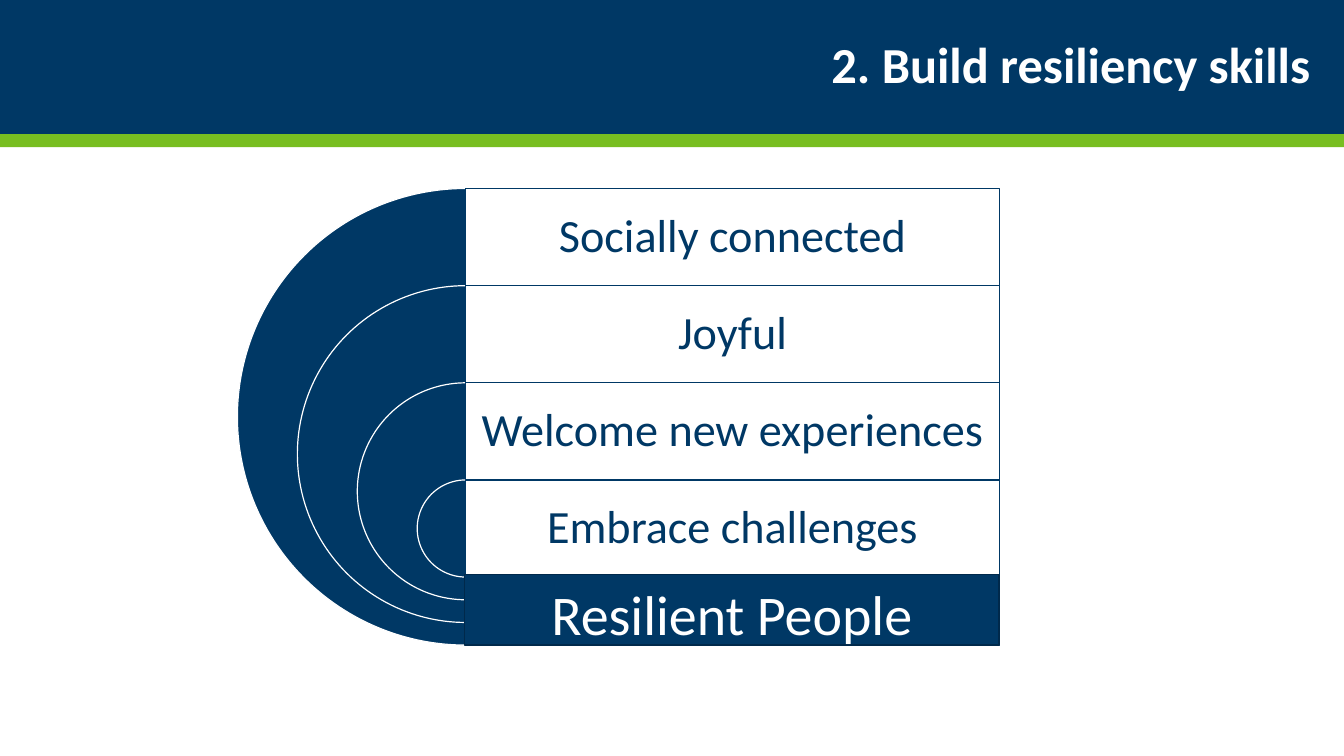
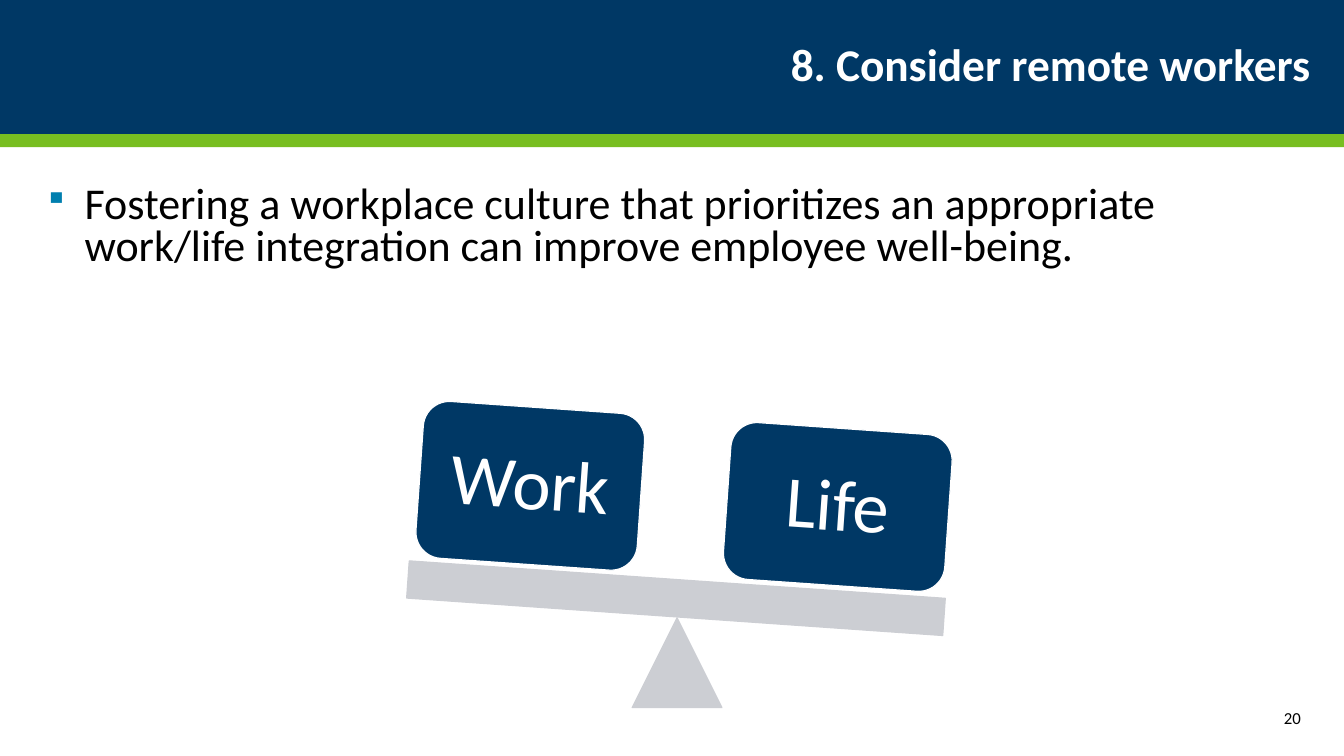
"""Build two slides on resilience and remote work."""
from dataclasses import dataclass

from lxml.etree import SubElement
from pptx import Presentation
from pptx.dml.color import RGBColor as Color
from pptx.enum.shapes import MSO_SHAPE as Kind
from pptx.enum.text import MSO_ANCHOR as Anchor, PP_ALIGN as Align
from pptx.oxml.ns import qn
from pptx.shapes.autoshape import Shape
from pptx.slide import Slide
from pptx.util import Inches, Pt

NAVY = Color(0x00, 0x38, 0x65)
DARK = Color(0x00, 0x29, 0x4B)
GREEN = Color(0x78, 0xBE, 0x21)
BLUE = Color(0x00, 0x7F, 0xAF)
GRAY = Color(0xCC, 0xCE, 0xD3)
WHITE = Color(0xFF, 0xFF, 0xFF)
BLACK = Color(0x00, 0x00, 0x00)
FONT = "Calibri"
WIDTH, HEIGHT = 13.33, 7.5
HEAD = 1.33
TILT = 4


@dataclass(frozen=True)
class Box:
    """Hold a place and size in inches."""
    left: float
    top: float
    width: float
    height: float

    def lengths(self) -> tuple:
        """Return the four lengths for a new shape."""
        return tuple(Inches(v) for v in (self.left, self.top, self.width, self.height))


@dataclass(frozen=True)
class Weight:
    """Hold a word and its block on the scale."""
    word: str
    box: Box


WEIGHTS = (
    Weight("Life", Box(7.21, 4.25, 2.2, 1.56)),
    Weight("Work", Box(4.16, 4.04, 2.2, 1.56)),
)
SKILLS = ("Socially connected", "Joyful", "Welcome new experiences", "Embrace challenges")


def draw(slide: Slide, kind: Kind, box: Box, fill: Color, line: Color | None = None,
         alpha: int = 100, turn: float = 0) -> Shape:
    """Draw a flat preset shape with its opacity in percent."""
    shape = slide.shapes.add_shape(kind, *box.lengths())
    shape.shadow.inherit = False
    shape.rotation = turn
    shape.fill.solid()
    shape.fill.fore_color.rgb = fill
    if alpha < 100:
        tone = shape.fill._xPr.find(qn("a:solidFill"))[0]
        SubElement(tone, qn("a:alpha")).set("val", str(alpha * 1000))
    if line is None:
        shape.line.fill.background()
    else:
        shape.line.color.rgb = line
        shape.line.width = Pt(0.85)
    return shape


def write(shape: Shape, text: str, size: float, color: Color, bold: bool = False,
          align: Align = Align.CENTER, anchor: Anchor = Anchor.MIDDLE,
          lead: float = 0.9, side: float = 0.1, edge: float = 0.05) -> None:
    """Fill a shape with one formatted paragraph."""
    frame = shape.text_frame
    frame.word_wrap = True
    frame.vertical_anchor = anchor
    frame.margin_left = frame.margin_right = Inches(side)
    frame.margin_top = frame.margin_bottom = Inches(edge)
    para = frame.paragraphs[0]
    para.alignment = align
    para.line_spacing = lead
    run = para.add_run()
    run.text = text
    font = run.font
    font.name, font.size, font.bold = FONT, Pt(size), bold
    font.color.rgb = color


def label(slide: Slide, box: Box, text: str, size: float, color: Color, **style) -> Shape:
    """Add a text box."""
    shape = slide.shapes.add_textbox(*box.lengths())
    write(shape, text, size, color, **style)
    return shape


def bullet(shape: Shape, sign: str, color: Color, indent: float, space: float,
           scale: int) -> None:
    """Give the first paragraph a hanging bullet scaled in percent."""
    para = shape.text_frame.paragraphs[0]
    para.space_before = para.space_after = Pt(space)
    props = para._p.get_or_add_pPr()
    props.set("marL", str(Inches(indent)))
    props.set("indent", str(-Inches(indent)))
    tone = SubElement(props, qn("a:buClr"))
    SubElement(tone, qn("a:srgbClr")).set("val", str(color))
    SubElement(props, qn("a:buSzPct")).set("val", str(scale * 1000))
    SubElement(props, qn("a:buChar")).set("char", sign)


def start(deck, title: str, size: float) -> Slide:
    """Add a slide with the shared bands and title."""
    slide = deck.slides.add_slide(deck.slide_layouts[6])
    draw(slide, Kind.RECTANGLE, Box(0, 0, WIDTH, HEAD), NAVY)
    draw(slide, Kind.RECTANGLE, Box(0, HEAD, WIDTH, 0.13), GREEN)
    label(slide, Box(0, 0, 13, HEAD), title, size, WHITE,
          bold=True, align=Align.RIGHT, side=0)
    return slide


def rings(slide: Slide) -> None:
    """Draw nested half rings with a row for each skill."""
    left, top, wide, full = 4.62, 1.87, 5.29, 4.53
    row = full / 4.7
    step = (full - row) / (len(SKILLS) - 1)
    for i, skill in enumerate(SKILLS):
        size, y = full - i * step, top + i * row
        pie = draw(slide, Kind.PIE, Box(left - size / 2, y, size, size), NAVY, WHITE)
        pie.adjustments[0], pie.adjustments[1] = 54, 162
        draw(slide, Kind.RECTANGLE, Box(left, y, wide, size), WHITE, NAVY, alpha=90)
        label(slide, Box(left, y, wide, row), skill, 33, NAVY, side=0.1, edge=0.14)
    base = draw(slide, Kind.RECTANGLE, Box(4.61, 5.7, 5.3, 0.7), NAVY, DARK)
    write(base, "Resilient People", 40, WHITE, anchor=Anchor.TOP, lead=1)


def scale(slide: Slide) -> None:
    """Draw a tilted scale with its weights."""
    draw(slide, Kind.ISOSCELES_TRIANGLE, Box(6.27, 6.13, 0.89, 0.89), GRAY, GRAY)
    draw(slide, Kind.RECTANGLE, Box(4.04, 5.75, 5.33, 0.37), GRAY, GRAY, turn=TILT)
    for item in WEIGHTS:
        block = draw(slide, Kind.ROUNDED_RECTANGLE, item.box, NAVY, WHITE, turn=TILT)
        write(block, item.word, 52, WHITE, side=0.05)


def main() -> None:
    """Build and save the deck."""
    deck = Presentation()
    deck.slide_width, deck.slide_height = Inches(WIDTH), Inches(HEIGHT)
    rings(start(deck, "2. Build resiliency skills", 36))
    slide = start(deck, "8. Consider remote workers", 32.4)
    body = label(slide, Box(0.34, 1.79, 12.66, 1.67),
                 "Fostering a workplace culture that prioritizes an appropriate "
                 "work/life integration can improve employee well-being.",
                 31.4, BLACK, align=Align.LEFT, anchor=Anchor.TOP, lead=0.8)
    bullet(body, "▪", BLUE, 0.4, 10, 75)
    label(slide, Box(11.4, 6.92, 1.6, 0.4), "20", 12, BLACK, align=Align.RIGHT, lead=1)
    scale(slide)
    deck.save("out.pptx")


if __name__ == "__main__":
    main()
